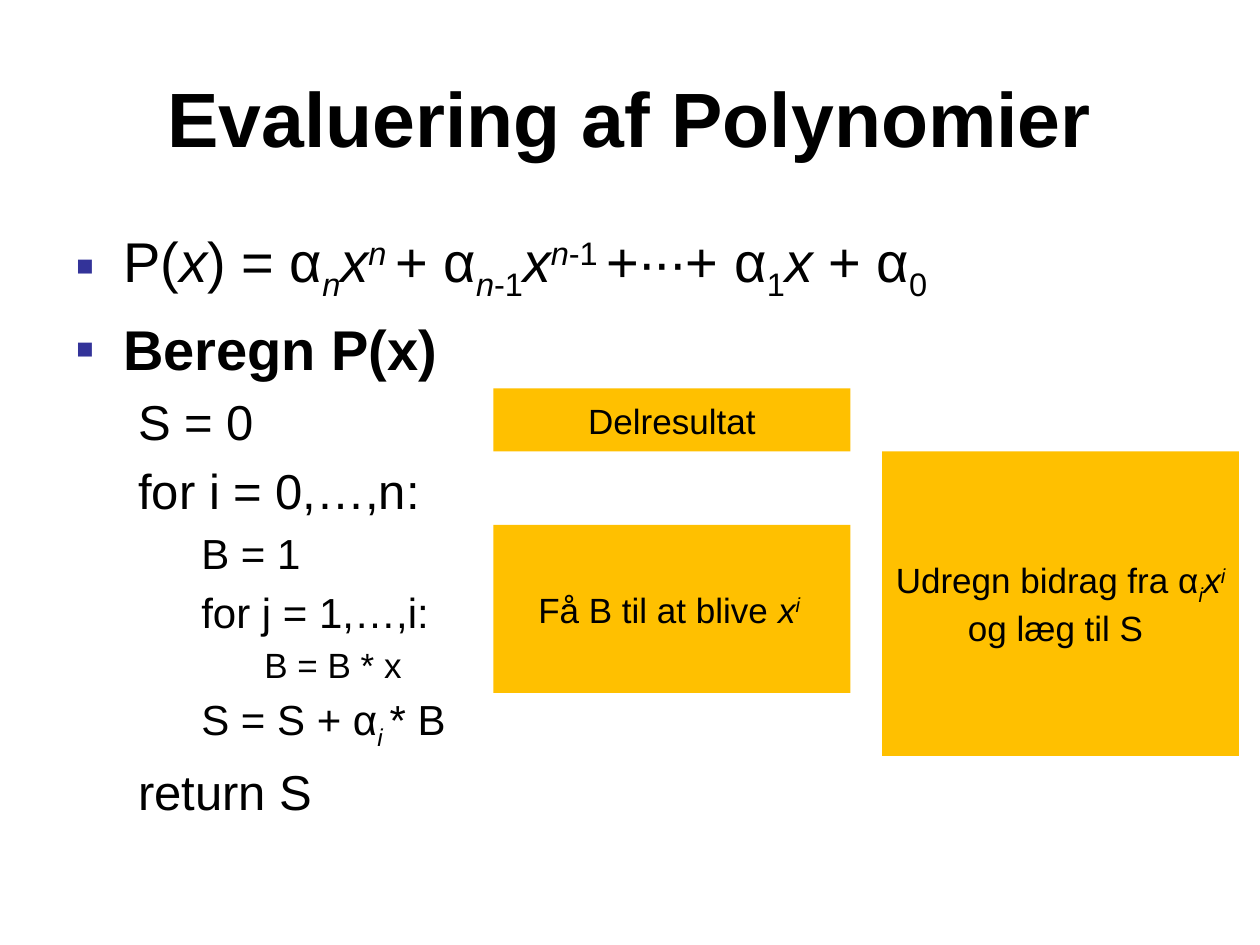
from dataclasses import dataclass

from lxml.etree import SubElement
from pptx import Presentation
from pptx.dml.color import RGBColor
from pptx.enum.shapes import MSO_SHAPE
from pptx.enum.text import MSO_ANCHOR, PP_ALIGN
from pptx.oxml.ns import qn
from pptx.util import Inches, Pt

BLACK = RGBColor(0x00, 0x00, 0x00)
AMBER = RGBColor(0xFF, 0xC0, 0x00)
INDIGO = RGBColor(0x33, 0x33, 0x99)
FONT = "Arial"
CELL = Inches(10) // 120
INDENT = Inches(0.5)
HANGING = Inches(0.38)
SIZES = (32, 28, 24, 20)
SUB, SUPER = -25, 30


@dataclass(frozen=True)
class Span:
    text: str
    italic: bool = False
    bold: bool = False
    base: int = 0


@dataclass(frozen=True)
class Line:
    level: int
    spans: tuple[Span, ...]


@dataclass(frozen=True)
class Area:
    column: float
    row: float
    columns: float
    rows: float

    def lengths(self) -> tuple[int, ...]:
        return tuple(round(CELL * count) for count in
                     (self.column, self.row, self.columns, self.rows))


@dataclass(frozen=True)
class Note:
    area: Area
    spans: tuple[Span, ...]


TITLE_AREA = Area(6, 3.6, 108, 15)
BODY_AREA = Area(6, 21, 108, 59.4)

LINES = (
    Line(0, (
        Span("P("), Span("x", italic=True), Span(") = α"),
        Span("n", italic=True, base=SUB), Span("x", italic=True),
        Span("n ", italic=True, base=SUPER), Span("+ α"),
        Span("n", italic=True, base=SUB), Span("-1", base=SUB),
        Span("x", italic=True), Span("n", italic=True, base=SUPER),
        Span("-1 ", base=SUPER), Span("+∙∙∙+ α"), Span("1", base=SUB),
        Span("x ", italic=True), Span("+ α"), Span("0", base=SUB),
    )),
    Line(0, (Span("Beregn P(x)", bold=True),)),
    Line(1, (Span("S = 0"),)),
    Line(1, (Span("for i = 0,…,n:"),)),
    Line(2, (Span("B = 1"),)),
    Line(2, (Span("for j = 1,…,i:"),)),
    Line(3, (Span("B = B * x"),)),
    Line(2, (Span("S = S + α"), Span("i ", italic=True, base=SUB), Span("* B"))),
    Line(1, (Span("return S"),)),
)

NOTES = (
    Note(Area(47, 37, 34, 6), (Span("Delresultat"),)),
    Note(Area(84, 43, 34, 29), (
        Span("Udregn bidrag fra α"), Span("i", italic=True, base=SUB),
        Span("x", italic=True), Span("i ", italic=True, base=SUPER),
        Span("og læg til S "),
    )),
    Note(Area(47, 50, 34, 16), (
        Span("Få B til at blive "), Span("x", italic=True),
        Span("i ", italic=True, base=SUPER),
    )),
)


def write(para, text: str, *, size: float, bold: bool = False,
          italic: bool = False, base: int = 0, color: RGBColor = BLACK) -> None:
    run = para.add_run()
    run.text = text
    font = run.font
    font.name, font.size, font.bold, font.italic = FONT, Pt(size), bold, italic
    font.color.rgb = color
    if base:
        run._r.get_or_add_rPr().set("baseline", str(base * 1000))


def write_spans(para, spans: tuple[Span, ...], size: float) -> None:
    for span in spans:
        write(para, span.text, size=size, bold=span.bold,
              italic=span.italic, base=span.base)


def format_line(para, level: int) -> None:
    para.level = level
    properties = para._p.get_or_add_pPr()
    properties.set("marL", str(INDENT * level if level else HANGING))
    properties.set("indent", str(0 if level else -HANGING))
    spacing = SubElement(properties, qn("a:spcBef"))
    SubElement(spacing, qn("a:spcPct")).set("val", "20000")
    if level:
        SubElement(properties, qn("a:buNone"))
        return
    bullet_color = SubElement(properties, qn("a:buClr"))
    SubElement(bullet_color, qn("a:srgbClr")).set("val", str(INDIGO))
    SubElement(properties, qn("a:buFont")).set("typeface", FONT)
    SubElement(properties, qn("a:buChar")).set("char", "▪")


def add_title(slide, text: str) -> None:
    frame = slide.shapes.add_textbox(*TITLE_AREA.lengths()).text_frame
    frame.word_wrap = True
    frame.vertical_anchor = MSO_ANCHOR.MIDDLE
    para = frame.paragraphs[0]
    para.alignment = PP_ALIGN.CENTER
    write(para, text, size=44, bold=True)


def add_body(slide, lines: tuple[Line, ...]) -> None:
    frame = slide.shapes.add_textbox(*BODY_AREA.lengths()).text_frame
    frame.word_wrap = True
    for index, line in enumerate(lines):
        para = frame.add_paragraph() if index else frame.paragraphs[0]
        format_line(para, line.level)
        write_spans(para, line.spans, SIZES[line.level])


def add_note(slide, note: Note) -> None:
    box = slide.shapes.add_shape(MSO_SHAPE.RECTANGLE, *note.area.lengths())
    box.shadow.inherit = False
    box.fill.solid()
    box.fill.fore_color.rgb = AMBER
    box.line.fill.background()
    frame = box.text_frame
    frame.word_wrap = True
    frame.vertical_anchor = MSO_ANCHOR.MIDDLE
    para = frame.paragraphs[0]
    para.alignment = PP_ALIGN.CENTER
    write_spans(para, note.spans, 20)


def main() -> None:
    deck = Presentation()
    deck.slide_width, deck.slide_height = CELL * 120, CELL * 90
    slide = deck.slides.add_slide(deck.slide_layouts[6])
    add_title(slide, "Evaluering af Polynomier")
    add_body(slide, LINES)
    for note in NOTES:
        add_note(slide, note)
    deck.save("out.pptx")


if __name__ == "__main__":
    main()
